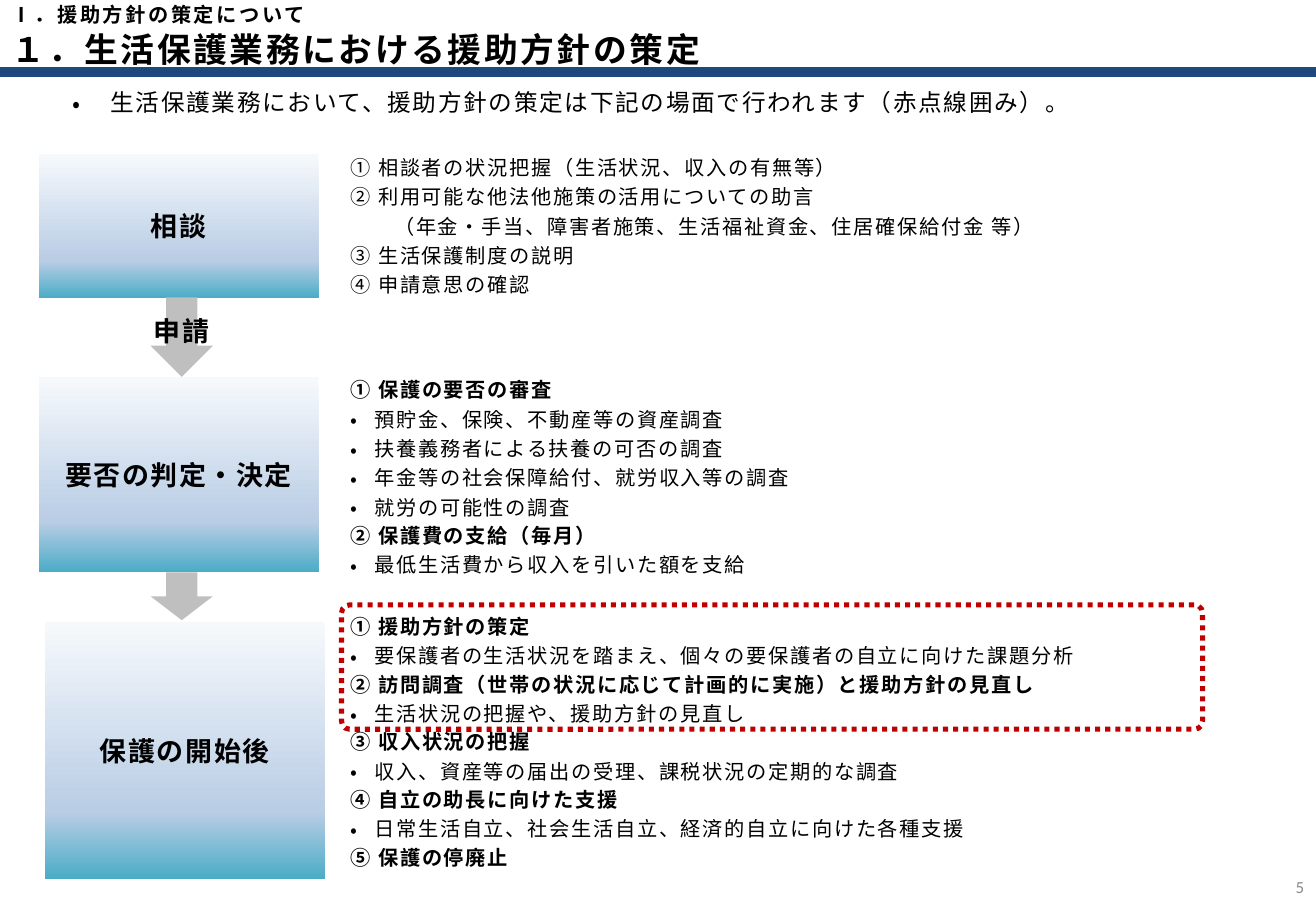
from copy import deepcopy

from pptx import Presentation
from pptx.dml.color import RGBColor
from pptx.enum.dml import MSO_LINE
from pptx.enum.shapes import MSO_CONNECTOR, MSO_SHAPE
from pptx.enum.text import MSO_ANCHOR, PP_ALIGN
from pptx.oxml.ns import qn
from pptx.util import Cm, Pt
from lxml.etree import SubElement

BLACK = RGBColor(0x00, 0x00, 0x00)
NAVY = RGBColor(0x1F, 0x49, 0x7D)
RED = RGBColor(0xC0, 0x00, 0x00)
ARROW_GRAY = RGBColor(0xBF, 0xBF, 0xBF)
PAGE_GRAY = RGBColor(0x89, 0x89, 0x89)
STAGE_GRADIENT = [
    (0, RGBColor(0xF6, 0xF9, 0xFC)),
    (0.74, RGBColor(0xB9, 0xCD, 0xE5)),
    (1, RGBColor(0x4B, 0xAC, 0xC6)),
]
JAPANESE = "Noto Sans CJK JP"
BULLET = "• "
NOTE = "（"

prs = Presentation()
prs.slide_width, prs.slide_height = Cm(27.51), Cm(19.05)
slide = prs.slides.add_slide(prs.slide_layouts[6])
shapes = slide.shapes


def write(frame, lines, size, bold=False, spacing=1, align=PP_ALIGN.LEFT,
          anchor=MSO_ANCHOR.TOP, tight=False, indent=0.51,
          font_name=JAPANESE, color=BLACK):
    """Fill a frame; "• " starts a bullet, never bold, and "（" an indented note."""
    frame.word_wrap = True
    frame.vertical_anchor = anchor
    for number, line in enumerate(lines):
        paragraph = frame.paragraphs[0] if number == 0 else frame.add_paragraph()
        is_bullet = line.startswith(BULLET)
        is_bold = bold and not is_bullet
        paragraph.alignment = align
        if tight:
            paragraph.line_spacing = Pt(size * 1.2)
        if number:
            paragraph.space_before = Pt(2.4 if is_bold else 3)
        properties = paragraph._p.get_or_add_pPr()
        if is_bullet:
            properties.set("marL", str(Cm(indent)))
            properties.set("indent", str(-Cm(indent)))
            SubElement(properties, qn("a:buFont"), typeface=JAPANESE)
            SubElement(properties, qn("a:buChar"), char="•")
        elif line.startswith(NOTE):
            properties.set("marL", str(Cm(0.92)))
        run = paragraph.add_run()
        run.text = line.removeprefix(BULLET)
        run.font.size = Pt(size)
        run.font.bold = is_bold
        run.font.name = font_name
        run.font.color.rgb = color
        run_properties = run._r.get_or_add_rPr()
        run_properties.set("spc", str(int(spacing * 100)))
        SubElement(run_properties, qn("a:ea"), typeface=font_name)


def add_text(left, top, width, height, lines, size, **style):
    box = shapes.add_textbox(Cm(left), Cm(top), Cm(width), Cm(height))
    write(box.text_frame, lines, size, **style)


# Heading
rule = shapes.add_connector(MSO_CONNECTOR.STRAIGHT, 0, Cm(1.5), prs.slide_width, Cm(1.5))
rule.line.color.rgb = NAVY
rule.line.width = Pt(6)
SubElement(rule._element.spPr, qn("a:effectLst"))

for top, height, size, heading in [
    (0.53, 0.99, 20, "１．生活保護業務における援助方針の策定"),
    (0.03, 0.53, 12, "Ⅰ．援助方針の策定について"),
]:
    add_text(0, top, 23.04, height, [heading], size, bold=True, spacing=1.5,
             anchor=MSO_ANCHOR.MIDDLE)

add_text(1.27, 1.72, 25, 0.86,
         ["• 生活保護業務において、援助方針の策定は下記の場面で行われます（赤点線囲み）。"],
         14, tight=True, indent=0.79)

# Red dotted frame around the steps where the policy is made
policy_frame = shapes.add_shape(MSO_SHAPE.ROUNDED_RECTANGLE,
                                Cm(7.14), Cm(12.65), Cm(18), Cm(2.6))
policy_frame.adjustments[0] = 0.064
policy_frame.shadow.inherit = False
policy_frame.fill.background()
policy_frame.line.color.rgb = RED
policy_frame.line.width = Pt(3)
policy_frame.line.dash_style = MSO_LINE.ROUND_DOT

# Details of each stage
add_text(7.07, 3.23, 19, 3, [
    "① 相談者の状況把握（生活状況、収入の有無等）",
    "② 利用可能な他法他施策の活用についての助言",
    "（年金・手当、障害者施策、生活福祉資金、住居確保給付金 等）",
    "③ 生活保護制度の説明",
    "④ 申請意思の確認",
], 12, anchor=MSO_ANCHOR.MIDDLE, tight=True)
add_text(7.07, 7.77, 19, 4.57, [
    "① 保護の要否の審査",
    "• 預貯金、保険、不動産等の資産調査",
    "• 扶養義務者による扶養の可否の調査",
    "• 年金等の社会保障給付、就労収入等の調査",
    "• 就労の可能性の調査",
    "② 保護費の支給（毎月）",
    "• 最低生活費から収入を引いた額を支給",
], 12, bold=True, tight=True)
add_text(7.07, 12.72, 19, 5.66, [
    "① 援助方針の策定",
    "• 要保護者の生活状況を踏まえ、個々の要保護者の自立に向けた課題分析",
    "② 訪問調査（世帯の状況に応じて計画的に実施）と援助方針の見直し",
    "• 生活状況の把握や、援助方針の見直し",
    "③ 収入状況の把握",
    "• 収入、資産等の届出の受理、課税状況の定期的な調査",
    "④ 自立の助長に向けた支援",
    "• 日常生活自立、社会生活自立、経済的自立に向けた各種支援",
    "⑤ 保護の停廃止",
], 12, bold=True, tight=True)

# Stages
for left, top, height, stage_name in [
    (0.81, 3.23, 3, "相談"),
    (0.81, 7.89, 4.08, "要否の判定・決定"),
    (0.94, 13.01, 5.37, "保護の開始後"),
]:
    stage = shapes.add_shape(MSO_SHAPE.RECTANGLE, Cm(left), Cm(top), Cm(5.85), Cm(height))
    stage.shadow.inherit = False
    stage.line.fill.background()
    stage.fill.gradient()
    stage.fill.gradient_angle = 270
    stop_list = stage._element.spPr.find(qn("a:gradFill")).find(qn("a:gsLst"))
    stop_list.append(deepcopy(stop_list[0]))
    for stop, (position, color) in zip(stage.fill.gradient_stops, STAGE_GRADIENT):
        stop.position = position
        stop.color.rgb = color
    write(stage.text_frame, [stage_name], 16, bold=True, align=PP_ALIGN.CENTER,
          anchor=MSO_ANCHOR.MIDDLE)

for top, height in [(6.22, 1.66), (11.97, 1)]:
    arrow = shapes.add_shape(MSO_SHAPE.DOWN_ARROW, Cm(3.15), Cm(top), Cm(1.3), Cm(height))
    arrow.shadow.inherit = False
    arrow.fill.solid()
    arrow.fill.fore_color.rgb = ARROW_GRAY
    arrow.line.fill.background()

add_text(2.16, 6.45, 3.28, 0.99, ["申請"], 16, bold=True, align=PP_ALIGN.CENTER, tight=True)

# Page number
add_text(26.47, 18.03, 1.04, 1.02, ["5"], 10, spacing=0, align=PP_ALIGN.RIGHT,
         anchor=MSO_ANCHOR.MIDDLE, font_name="Calibri", color=PAGE_GRAY)

prs.save("out.pptx")
